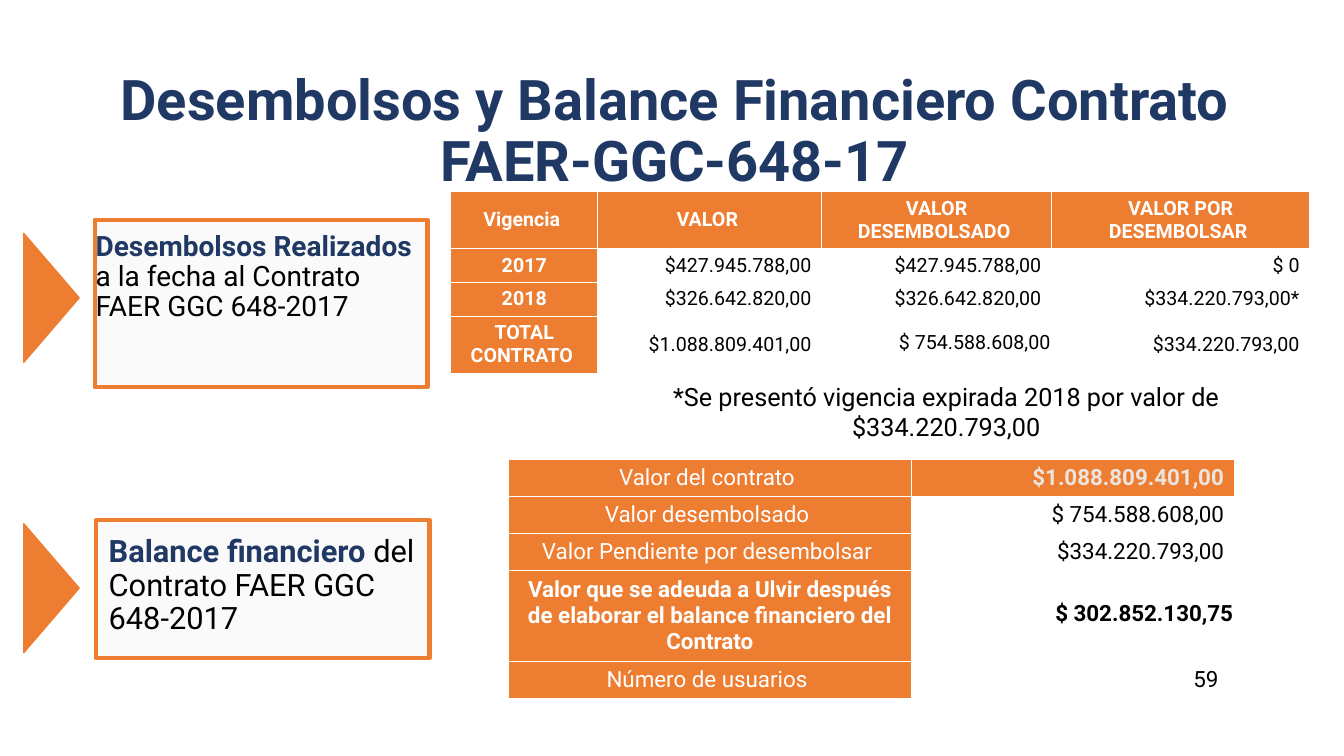
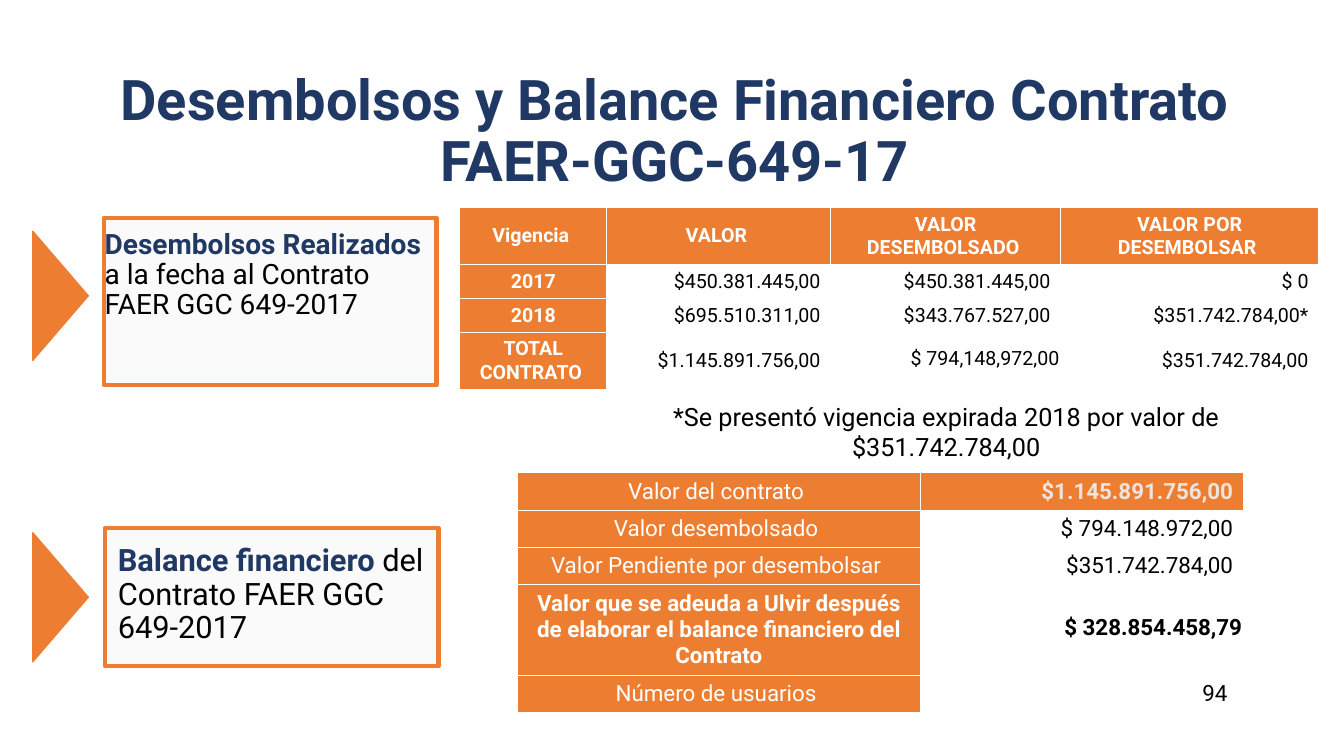
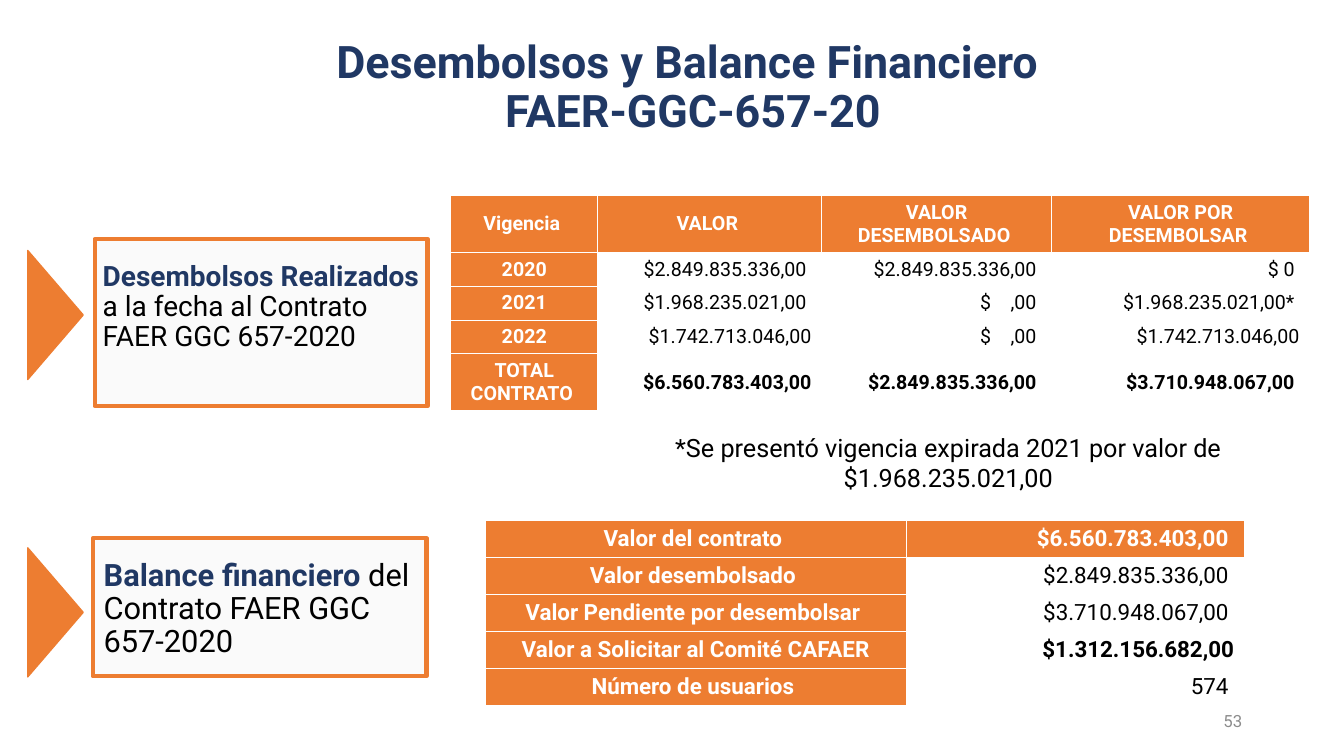
"""Builds three slides on disbursements and financial balance of FAER contracts."""
from dataclasses import dataclass
from typing import NamedTuple

from lxml.etree import SubElement
from pptx import Presentation
from pptx.dml.color import RGBColor
from pptx.enum.shapes import MSO_SHAPE as Shape
from pptx.enum.text import MSO_ANCHOR as Anchor, MSO_AUTO_SIZE as AutoSize, PP_ALIGN as Align
from pptx.oxml.ns import qn
from pptx.util import Pt

EMU_PER_PX = 9144


@dataclass(frozen=True)
class Theme:
    font: str = "Roboto"
    navy: str = "203864"
    orange: str = "ED7D31"
    panel: str = "F2F2F2"
    cream: str = "EBE4DF"
    white: str = "FFFFFF"
    black: str = "000000"
    gray: str = "8C8C8C"
    years_size: int = 14
    balance_size: int = 16
    note_size: int = 18
    done_size: int = 20
    panel_size: int = 22
    number_size: int = 12


THEME = Theme()


class Box(NamedTuple):
    left: int
    top: int
    width: int
    height: int


class Insets(NamedTuple):
    left: int = 10
    top: int = 5
    right: int = 10
    bottom: int = 5


class Point(NamedTuple):
    left: int
    top: int


PANEL_INSETS = Insets(top=4)
TIGHT = Insets(1, 1, 1, 5)


@dataclass(frozen=True)
class Cell:
    text: str
    color: str = THEME.black
    bold: bool = False
    filled: bool = False
    align: Align = Align.RIGHT
    insets: Insets = Insets()


@dataclass(frozen=True)
class Callout:
    lead: str
    body: str
    size: int
    frame: Box
    words: Box
    pointer: Point


@dataclass(frozen=True)
class Grid:
    at: Point
    widths: tuple[int, ...]
    heights: tuple[int, ...]
    size: int
    rows: list[list[Cell]]


@dataclass(frozen=True)
class Contract:
    title: str
    title_size: int
    title_box: Box
    callouts: tuple[Callout, Callout]
    years: Grid
    note: str
    note_at: Point
    balance: Grid
    number: str = ""


def px(length: int) -> int:
    return length * EMU_PER_PX


def rgb(color: str) -> RGBColor:
    return RGBColor.from_string(color)


def place(box: Box) -> list[int]:
    return [px(length) for length in box]


def set_insets(target, insets: Insets) -> None:
    target.margin_left, target.margin_top = px(insets.left), px(insets.top)
    target.margin_right, target.margin_bottom = px(insets.right), px(insets.bottom)


def write(frame, text: str, *, size: int, color: str = THEME.black, bold: bool = False,
          align: Align = Align.LEFT, spacing: float = 1.0, lead: str = "") -> None:
    paragraph = frame.paragraphs[0]
    paragraph.alignment = align
    paragraph.line_spacing = spacing
    parts = [(lead, THEME.navy, True)] if lead else []
    parts.append((text, color, bold))
    for content, ink, heavy in parts:
        for index, line in enumerate(content.split("\n")):
            if index:
                paragraph.add_line_break()
            run = paragraph.add_run()
            run.text = line
            run.font.name, run.font.size, run.font.bold = THEME.font, Pt(size), heavy
            run.font.color.rgb = rgb(ink)
    for line_break in paragraph._p.findall(qn("a:br")):
        SubElement(line_break, qn("a:rPr"), sz=str(size * 100))


def add_text(slide, box: Box, text: str, *, insets: Insets = Insets(),
             anchor: Anchor = Anchor.TOP, **style) -> None:
    frame = slide.shapes.add_textbox(*place(box)).text_frame
    frame.word_wrap = True
    frame.vertical_anchor = anchor
    set_insets(frame, insets)
    write(frame, text, **style)


def add_block(slide, kind: Shape, box: Box, fill: str, line_width: int, *,
              opacity: int = 100, rotation: int = 0) -> None:
    block = slide.shapes.add_shape(kind, *place(box))
    block.shadow.inherit = False
    block.rotation = rotation
    block.fill.solid()
    block.fill.fore_color.rgb = rgb(fill)
    block.line.color.rgb = rgb(THEME.orange)
    block.line.width = Pt(line_width)
    if opacity < 100:
        tint = block._element.spPr.find(qn("a:solidFill")).find(qn("a:srgbClr"))
        SubElement(tint, qn("a:alpha"), val=str(opacity * 1000))


def add_callout(slide, callout: Callout) -> None:
    add_block(slide, Shape.RECTANGLE, callout.frame, THEME.panel, 3, opacity=38)
    add_text(slide, callout.words, callout.body, insets=PANEL_INSETS, size=callout.size,
             spacing=0.9, lead=callout.lead)
    add_block(slide, Shape.ISOSCELES_TRIANGLE, Box(*callout.pointer, 128, 55),
              THEME.orange, 1, rotation=90)


def add_borders(cell) -> None:
    properties = cell._tc.get_or_add_tcPr()
    for side in ("a:lnL", "a:lnR", "a:lnT", "a:lnB"):
        border = SubElement(properties, qn(side), w=str(Pt(0.75)))
        SubElement(SubElement(border, qn("a:solidFill")), qn("a:srgbClr"), val=THEME.white)


def add_grid(slide, grid: Grid) -> None:
    box = Box(*grid.at, sum(grid.widths), sum(grid.heights))
    table = slide.shapes.add_table(len(grid.heights), len(grid.widths), *place(box)).table
    table.first_row = table.horz_banding = False
    for column, width in zip(table.columns, grid.widths):
        column.width = px(width)
    for row, height in zip(table.rows, grid.heights):
        row.height = px(height)
    for row_index, row in enumerate(grid.rows):
        for column_index, entry in enumerate(row):
            cell = table.cell(row_index, column_index)
            add_borders(cell)
            if entry.filled:
                cell.fill.solid()
                cell.fill.fore_color.rgb = rgb(THEME.orange)
            else:
                cell.fill.background()
            cell.vertical_anchor = Anchor.MIDDLE
            set_insets(cell, entry.insets)
            write(cell.text_frame, entry.text, size=grid.size, color=entry.color,
                  bold=entry.bold, align=entry.align)


def label(text: str, bold: bool = True) -> Cell:
    return Cell(text, THEME.white, bold, True, Align.CENTER)


def years_grid(at: Point, *years: tuple[str, ...], total: list[Cell]) -> Grid:
    headings = ("Vigencia ", "VALOR ", "VALOR DESEMBOLSADO ", "VALOR POR DESEMBOLSAR ")
    rows = [[label(heading) for heading in headings]]
    rows += [[label(year), *map(Cell, amounts)] for year, *amounts in years]
    rows.append([label("TOTAL CONTRATO "), *total])
    heights = (56, *[33] * len(years), 56)
    return Grid(at, (146, 222, 228, 256), heights, THEME.years_size, rows)


def balance_grid(at: Point, widths: tuple[int, int], heights: tuple[int, ...],
                 owed: str, amounts: list[Cell], bold: bool) -> Grid:
    names = ("Valor del contrato ", "Valor desembolsado ",
             "Valor Pendiente por desembolsar ", owed, "Número de usuarios ")
    rows = [[label(name, bold or name == owed), amount] for name, amount in zip(names, amounts)]
    return Grid(at, widths, heights, THEME.balance_size, rows)


def callouts(code: str, done: tuple[Point, Point, Point],
             balance: tuple[Point, Point, Point]) -> tuple[Callout, Callout]:
    return (
        Callout("Desembolsos Realizados ", f"a la fecha al Contrato FAER GGC {code}",
                THEME.done_size, Box(*done[0], 330, 166), Box(*done[1], 352, 128), done[2]),
        Callout("Balance financiero ", f"del Contrato FAER GGC {code}",
                THEME.panel_size, Box(*balance[0], 331, 137), Box(*balance[1], 339, 128),
                balance[2]),
    )


def note(year: int, amount: str) -> str:
    return f"*Se presentó vigencia expirada {year} por valor de {amount}"


OWED = "Valor que se adeuda a Ulvir después de elaborar el balance financiero del Contrato"
WIDE_TITLE = Box(94, 105, 1150, 92)

CONTRACTS = (
    Contract(
        "Desembolsos y Balance Financiero Contrato FAER-GGC-648-17", 40, WIDE_TITLE,
        callouts("648-2017", (Point(94, 218), Point(85, 226), Point(-13, 268)),
                 (Point(95, 516), Point(98, 528), Point(-13, 556))),
        years_grid(
            Point(447, 190),
            ("2017", "$427.945.788,00", "$427.945.788,00", "$ 0"),
            ("2018", "$326.642.820,00", "$326.642.820,00", "$334.220.793,00*"),
            total=[Cell("$1.088.809.401,00"), Cell("$ 754.588.608,00", insets=TIGHT),
                   Cell("$334.220.793,00")]),
        note(2018, "$334.220.793,00"), Point(605, 373),
        balance_grid(
            Point(504, 456), (400, 320), (36, 36, 36, 87, 36), OWED,
            [Cell("$1.088.809.401,00", THEME.cream, True, True), Cell("$ 754.588.608,00"),
             Cell("$334.220.793,00"), Cell("$ 302.852.130,75", bold=True, insets=TIGHT),
             Cell("59 ")], False)),
    Contract(
        "Desembolsos y Balance Financiero Contrato FAER-GGC-649-17", 40, WIDE_TITLE,
        callouts("649-2017", (Point(103, 216), Point(94, 224), Point(-4, 266)),
                 (Point(104, 524), Point(107, 537), Point(-4, 565))),
        years_grid(
            Point(456, 206),
            ("2017", "$450.381.445,00", "$450.381.445,00", "$ 0"),
            ("2018", "$695.510.311,00", "$343.767.527,00", "$351.742.784,00*"),
            total=[Cell("$1.145.891.756,00"), Cell("$ 794,148,972,00", insets=TIGHT),
                   Cell("$351.742.784,00")]),
        note(2018, "$351.742.784,00"), Point(605, 393),
        balance_grid(
            Point(513, 469), (400, 320), (37, 37, 37, 89, 37), OWED,
            [Cell("$1.145.891.756,00", THEME.cream, True, True), Cell("$ 794.148.972,00"),
             Cell("$351.742.784,00"), Cell("$ 328.854.458,79", bold=True, insets=TIGHT),
             Cell("94 ")], False)),
    Contract(
        "Desembolsos y Balance Financiero \nFAER-GGC-657-20", 32, Box(198, 49, 979, 92),
        callouts("657-2020", (Point(94, 237), Point(92, 256), Point(-9, 285)),
                 (Point(92, 534), Point(93, 551), Point(-9, 580))),
        years_grid(
            Point(447, 194),
            ("2020", "$2.849.835.336,00 ", "$2.849.835.336,00 ", "$ 0 "),
            ("2021", "$1.968.235.021,00 ", "$    ,00 ", "$1.968.235.021,00* "),
            ("2022", "$1.742.713.046,00", "$    ,00 ", "$1.742.713.046,00"),
            total=[Cell("$6.560.783.403,00", bold=True), Cell("$2.849.835.336,00 ", bold=True),
                   Cell("$3.710.948.067,00 ", bold=True)]),
        note(2021, "$1.968.235.021,00"), Point(607, 424),
        balance_grid(
            Point(481, 516), (418, 335), (36,) * 5, "Valor a Solicitar al Comité CAFAER",
            [Cell("$6.560.783.403,00 ", THEME.white, True, True), Cell("$2.849.835.336,00 "),
             Cell("$3.710.948.067,00 "), Cell("$1.312.156.682,00", bold=True),
             Cell("574 ")], True),
        number="53"),
)


def add_contract(deck, contract: Contract) -> None:
    slide = deck.slides.add_slide(deck.slide_layouts[5])
    title = slide.shapes.title
    title.left, title.top, title.width, title.height = place(contract.title_box)
    frame = title.text_frame
    frame.word_wrap = True
    frame.auto_size = AutoSize.NONE
    frame.vertical_anchor = Anchor.BOTTOM
    set_insets(frame, Insets())
    write(frame, contract.title, size=contract.title_size, color=THEME.navy, bold=True,
          align=Align.CENTER, spacing=0.9)
    for callout in contract.callouts:
        add_callout(slide, callout)
    add_grid(slide, contract.years)
    add_grid(slide, contract.balance)
    add_text(slide, Box(*contract.note_at, 667, 71), contract.note, size=THEME.note_size,
             align=Align.CENTER)
    if contract.number:
        add_text(slide, Box(942, 695, 300, 40), contract.number, anchor=Anchor.MIDDLE,
                 size=THEME.number_size, color=THEME.gray, align=Align.RIGHT)


def main() -> None:
    deck = Presentation()
    deck.slide_width, deck.slide_height = px(1333), px(750)
    for contract in CONTRACTS:
        add_contract(deck, contract)
    deck.save("out.pptx")


if __name__ == "__main__":
    main()
